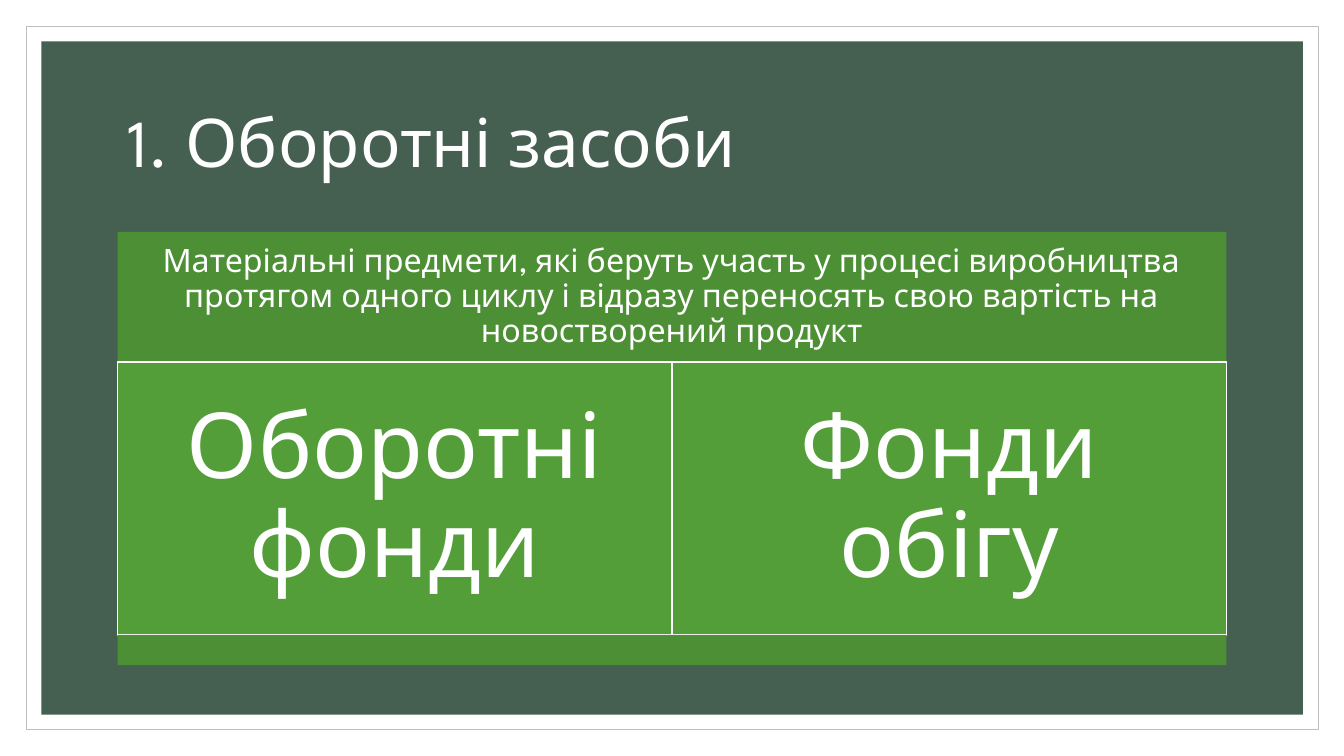
import pptx
import pptx.dml.color
import pptx.enum.shapes
import pptx.enum.text
import pptx.util

Pt = pptx.util.Pt
ALIGN = pptx.enum.text.PP_ALIGN
FONT = "League Spartan"
COLORS = {
    "white": "FFFFFF",
    "frame": "BFBFBF",
    "panel": "455F51",
    "band": "4C8F34",
    "cell": "549E39",
}
DEFINITION = (
    "Матеріальні предмети, які беруть участь у процесі виробництва "
    "протягом одного циклу і відразу переносять свою вартість на "
    "новостворений продукт"
)


def rgb(name):
    return pptx.dml.color.RGBColor.from_string(COLORS[name])


def write_text(shape, text, size, align=ALIGN.CENTER, inset=7.2, inset_y=None):
    frame = shape.text_frame
    frame.word_wrap = True
    frame.auto_size = pptx.enum.text.MSO_AUTO_SIZE.NONE
    frame.vertical_anchor = pptx.enum.text.MSO_ANCHOR.MIDDLE
    frame.margin_left = frame.margin_right = Pt(inset)
    frame.margin_top = frame.margin_bottom = Pt(inset if inset_y is None else inset_y)
    paragraph = frame.paragraphs[0]
    paragraph.alignment = align
    paragraph.line_spacing = 0.9
    run = paragraph.add_run()
    run.text = text
    run.font.name = FONT
    run.font.size = Pt(size)
    run.font.color.rgb = rgb("white")


def add_box(slide, left, top, width, height, fill, line=None, line_width=1):
    shape = slide.shapes.add_shape(
        pptx.enum.shapes.MSO_SHAPE.RECTANGLE,
        Pt(left), Pt(top), Pt(width), Pt(height))
    shape.shadow.inherit = False
    shape.fill.solid()
    shape.fill.fore_color.rgb = rgb(fill)
    if line:
        shape.line.color.rgb = rgb(line)
        shape.line.width = Pt(line_width)
    else:
        shape.line.fill.background()
    return shape


def add_backdrop(slide, left, top, width, height):
    """Thin outer frame with a dark panel inside it."""
    gap = 10.8
    add_box(slide, left, top, width, height, "white", "frame", 0.5)
    add_box(slide, left + gap, top + gap, width - 2 * gap, height - 2 * gap, "panel")


def place_title(slide, left, top, width, height, text):
    title = slide.shapes.title
    title.left, title.top = Pt(left), Pt(top)
    title.width, title.height = Pt(width), Pt(height)
    write_text(title, text, 48, align=ALIGN.LEFT, inset_y=3.6)
    # The title must lie above the backdrop.
    title.element.getparent().append(title.element)


def add_definition_table(slide, left, top, width, height, definition, parts):
    """Definition band, a row of equal cells and a closing band."""
    header_height = height * 0.3
    cell_height = height * 0.63
    cell_width = width / len(parts)
    cell_top = top + header_height
    footer_top = cell_top + cell_height

    header = add_box(slide, left, top, width, header_height, "band")
    write_text(header, definition, 23)
    for index, part in enumerate(parts):
        cell = add_box(slide, left + index * cell_width, cell_top,
                       cell_width, cell_height, "cell", "white")
        write_text(cell, part, 65, inset=19.44)
    add_box(slide, left, footer_top, width, top + height - footer_top, "band")


def main():
    presentation = pptx.Presentation()
    presentation.slide_width = Pt(960)
    presentation.slide_height = Pt(540)
    slide = presentation.slides.add_slide(presentation.slide_layouts[5])
    add_backdrop(slide, 18.72, 18.72, 922.8, 502.6)
    place_title(slide, 84, 50.4, 792, 108, "1. Оборотні засоби")
    add_definition_table(slide, 84, 165.6, 792, 309.6, DEFINITION,
                         ["Оборотні фонди", "Фонди обігу"])
    presentation.save("out.pptx")


if __name__ == "__main__":
    main()
